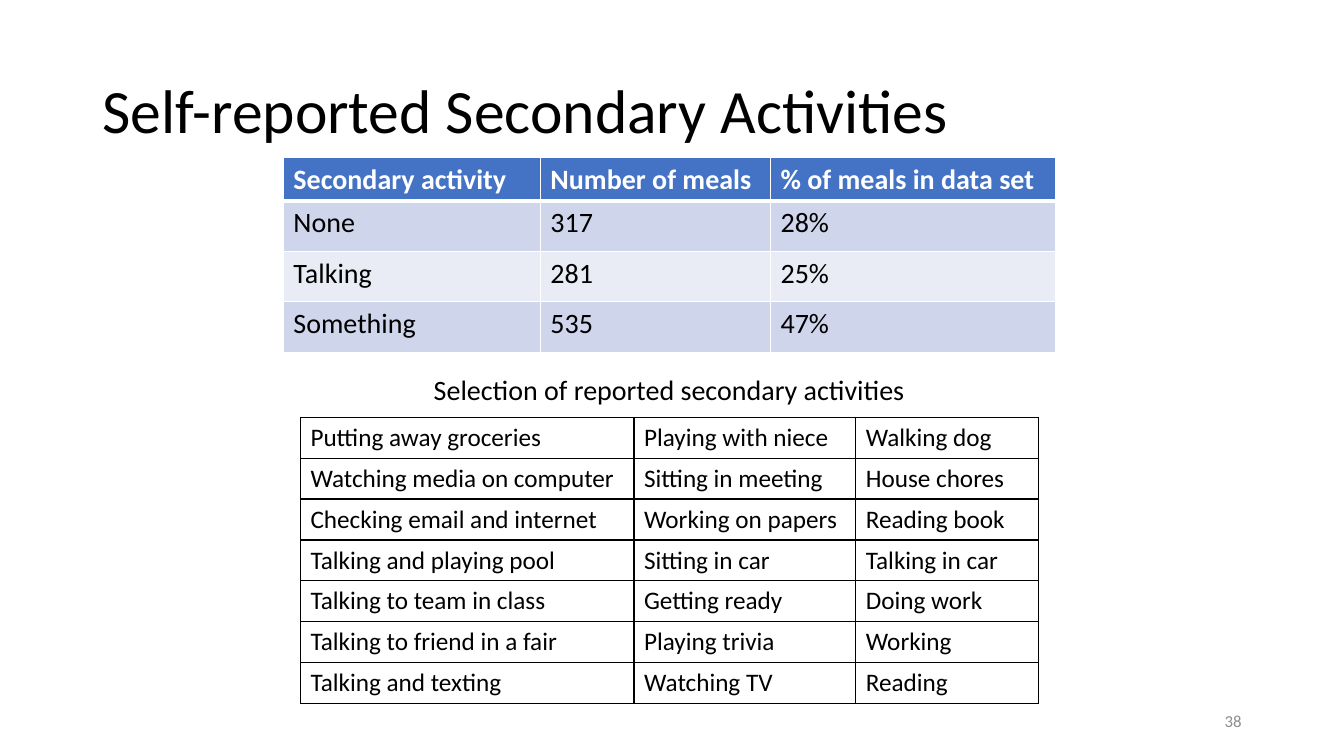
from dataclasses import dataclass

from lxml.etree import SubElement
from pptx import Presentation
from pptx.dml.color import RGBColor
from pptx.enum.text import MSO_ANCHOR, PP_ALIGN
from pptx.oxml.ns import qn
from pptx.util import Pt

FONT = "Calibri"
BLACK, WHITE, GREY = "000000", "FFFFFF", "8C8C8C"
HEADER_FILL, BANDS = "4472C4", ("CFD5EA", "E9EBF5")
SIDES = ("lnL", "lnR", "lnT", "lnB")


@dataclass
class Box:
    left: float
    top: float
    width: float
    height: float

    def lengths(self) -> tuple:
        return Pt(self.left), Pt(self.top), Pt(self.width), Pt(self.height)


@dataclass
class Grid:
    left: float
    top: float
    col_widths: list[float]
    row_heights: list[float]
    rows: list[list[str]]
    size: float
    line: str
    has_header: bool = False


def rgb(value: str) -> RGBColor:
    return RGBColor.from_string(value)


def format_text(tf, size: float, color: str = BLACK, bold: bool = False,
                align=PP_ALIGN.LEFT) -> None:
    for p in tf.paragraphs:
        p.alignment = align
        for r in p.runs:
            r.font.name = FONT
            r.font.size = Pt(size)
            r.font.bold = bold
            r.font.color.rgb = rgb(color)


def set_border(cell, side: str, color: str, width: float) -> None:
    tc_pr = cell._tc.get_or_add_tcPr()
    ln = SubElement(tc_pr, qn(f"a:{side}"), w=str(Pt(width)))
    fill = SubElement(ln, qn("a:solidFill"))
    SubElement(fill, qn("a:srgbClr"), val=color)


def add_grid(slide, grid: Grid) -> None:
    box = Box(grid.left, grid.top, sum(grid.col_widths), sum(grid.row_heights))
    table = slide.shapes.add_table(
        len(grid.rows), len(grid.col_widths), *box.lengths()).table
    table.first_row = grid.has_header
    table.horz_banding = grid.has_header
    for column, width in zip(table.columns, grid.col_widths):
        column.width = Pt(width)
    for i, (row, height) in enumerate(zip(table.rows, grid.row_heights)):
        row.height = Pt(height)
        is_header = grid.has_header and i == 0
        for cell, text in zip(row.cells, grid.rows[i]):
            cell.text_frame.text = text
            format_text(cell.text_frame, grid.size,
                        WHITE if is_header else BLACK, is_header)
            for side in SIDES:
                thick = (is_header and side == "lnB"
                         or grid.has_header and i == 1 and side == "lnT")
                set_border(cell, side, grid.line, 3 if thick else 1)
            if grid.has_header:
                cell.fill.solid()
                cell.fill.fore_color.rgb = rgb(
                    HEADER_FILL if is_header else BANDS[(i - 1) % 2])
            else:
                cell.fill.background()


def add_label(slide, box: Box, text: str, size: float, color: str,
              align, anchor) -> None:
    tf = slide.shapes.add_textbox(*box.lengths()).text_frame
    tf.word_wrap = True
    tf.vertical_anchor = anchor
    tf.text = text
    format_text(tf, size, color, align=align)


MEALS = Grid(
    202.4, 112.4, [183.6, 164.4, 203.8], [30.8, 36, 36, 36],
    [["Secondary activity", "Number of meals", "% of meals in data set"],
     ["None", "317", "28%"],
     ["Talking", "281", "25%"],
     ["Something", "535", "47%"]],
    20, WHITE, has_header=True)

ACTIVITIES = Grid(
    214.6, 298.1, [238.3, 158.4, 130.3], [29.2] * 7,
    [["Putting away groceries", "Playing with niece", "Walking dog"],
     ["Watching media on computer", "Sitting in meeting", "House chores"],
     ["Checking email and internet", "Working on papers", "Reading book"],
     ["Talking and playing pool", "Sitting in car", "Talking in car"],
     ["Talking to team in class", "Getting ready", "Doing work"],
     ["Talking to friend in a fair", "Playing trivia", "Working"],
     ["Talking and texting", "Watching TV", "Reading"]],
    18, BLACK)


def main() -> None:
    prs = Presentation()
    prs.slide_width, prs.slide_height = Pt(960), Pt(540)
    slide = prs.slides.add_slide(prs.slide_layouts[5])

    # Title
    title = slide.shapes.title
    title.left, title.top, title.width, title.height = Box(
        66, 28.75, 828, 104.4).lengths()
    tf = title.text_frame
    tf.text = "Self-reported Secondary Activities"
    tf.vertical_anchor = MSO_ANCHOR.MIDDLE
    tf.paragraphs[0].line_spacing = 0.9
    format_text(tf, 44)

    # Slide number and caption
    add_label(slide, Box(678, 500.5, 216, 28.75), "38", 12, GREY,
              PP_ALIGN.RIGHT, MSO_ANCHOR.MIDDLE)
    add_label(slide, Box(195, 262.2, 566, 31.5),
              "Selection of reported secondary activities", 20, BLACK,
              PP_ALIGN.CENTER, MSO_ANCHOR.TOP)

    # Tables
    for grid in (MEALS, ACTIVITIES):
        add_grid(slide, grid)

    prs.save("out.pptx")


if __name__ == "__main__":
    main()
